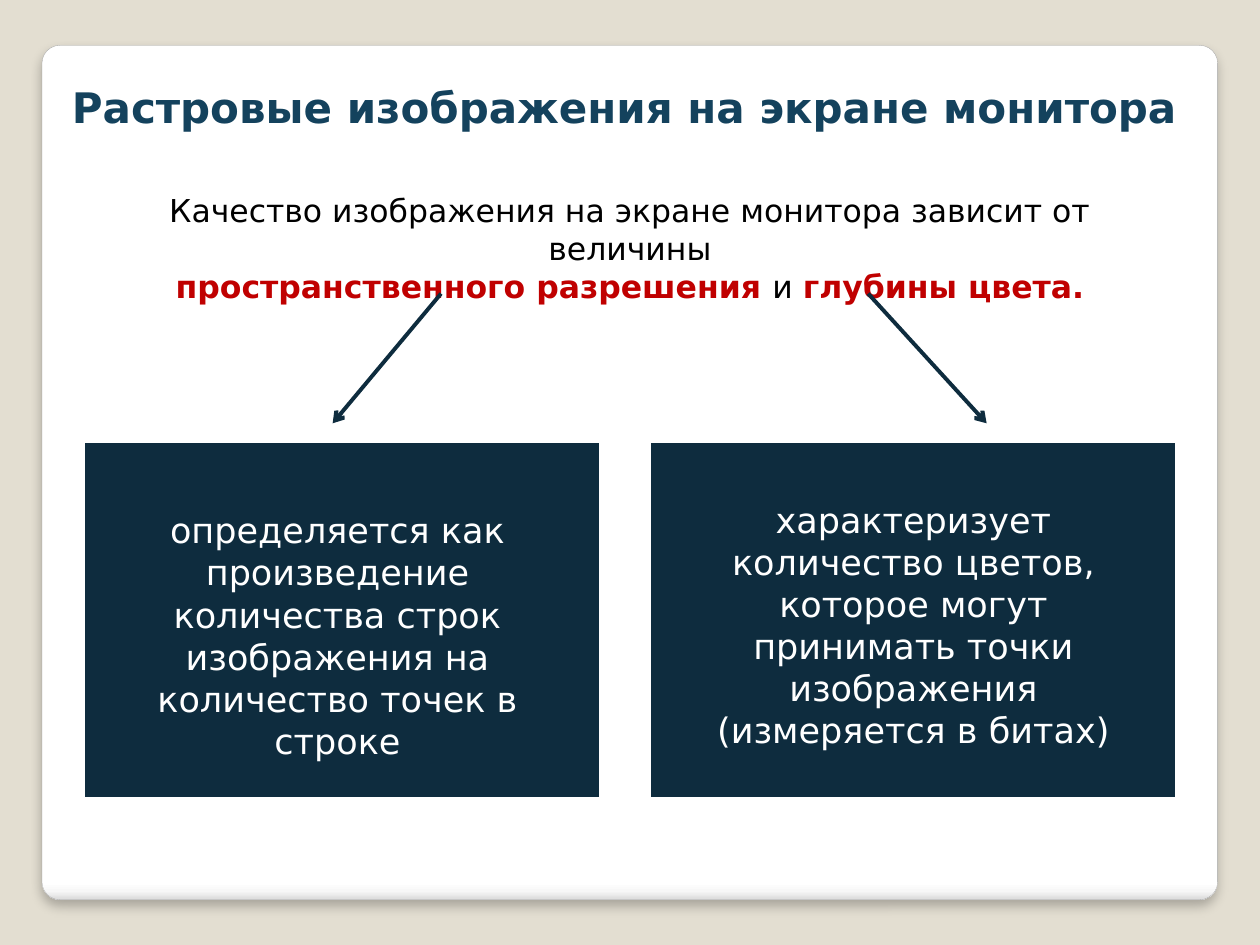
"""Build a slide on what determines the quality of raster images on a monitor."""
from lxml.etree import SubElement
from pptx import Presentation
from pptx.dml.color import RGBColor
from pptx.enum.shapes import MSO_CONNECTOR, MSO_SHAPE
from pptx.enum.text import MSO_AUTO_SIZE, PP_ALIGN
from pptx.oxml import parse_xml
from pptx.oxml.ns import nsdecls, qn
from pptx.util import Pt

BEIGE = RGBColor(0xE3, 0xDE, 0xD1)
GREY = RGBColor(0xA4, 0xA4, 0xA4)
WHITE = RGBColor(0xFF, 0xFF, 0xFF)
BLACK = RGBColor(0x00, 0x00, 0x00)
BLUE = RGBColor(0x14, 0x42, 0x5D)
NAVY = RGBColor(0x0E, 0x2C, 0x3E)
RED = RGBColor(0xC0, 0x00, 0x00)
CARD_STOPS = [(0, WHITE), (98, WHITE), (99, RGBColor(0xF7, 0xF7, 0xF7)),
              (100, RGBColor(0xDA, 0xDA, 0xDA))]
BORDERS = {"a:lnL": 1, "a:lnR": 1, "a:lnT": 1, "a:lnB": 3}
PANEL_TOP, PANEL_HEIGHT = 252.7, 203.8
ARROW_TOP, ARROW_BOTTOM = 167.8, 241.9


def add_text(place, size, lines):
    box = slide.shapes.add_textbox(*map(Pt, place))
    frame = box.text_frame
    frame.word_wrap = True
    frame.auto_size = MSO_AUTO_SIZE.SHAPE_TO_FIT_TEXT
    for index, pieces in enumerate(lines):
        line = frame.add_paragraph() if index else frame.paragraphs[0]
        line.alignment = PP_ALIGN.CENTER
        for wording, color, bold in pieces:
            run = line.add_run()
            run.text = wording
            run.font.color.rgb = color
            font_values = {"name": "DejaVu Sans", "size": Pt(size), "bold": bold}
            for key, value in font_values.items():
                setattr(run.font, key, value)


presentation = Presentation()
presentation.slide_width, presentation.slide_height = Pt(720), Pt(540)
slide = presentation.slides.add_slide(presentation.slide_layouts[6])
slide.background.fill.solid()
slide.background.fill.fore_color.rgb = BEIGE

card = slide.shapes.add_shape(
    MSO_SHAPE.ROUNDED_RECTANGLE, Pt(24), Pt(25.9), Pt(671.8), Pt(488.2))
card.adjustments[0] = 0.021
card.line.color.rgb = GREY
card.line.width = Pt(0.16)
card.shadow.inherit = False
stops = "".join(
    f'<a:gs pos="{position * 1000}"><a:srgbClr val="{color}"/></a:gs>'
    for position, color in CARD_STOPS)
card_format = card.element.spPr
card_format.find(qn("a:prstGeom")).addnext(parse_xml(
    f'<a:gradFill {nsdecls("a")} rotWithShape="1"><a:gsLst>{stops}</a:gsLst>'
    '<a:lin ang="5400000" scaled="0"/></a:gradFill>'))
card_format.find(qn("a:effectLst")).append(parse_xml(
    f'<a:outerShdw {nsdecls("a")} blurRad="{Pt(6)}" dist="{Pt(4)}" dir="5400000"'
    ' algn="t" rotWithShape="0"><a:srgbClr val="000000"><a:alpha val="25000"/>'
    '</a:srgbClr></a:outerShdw>'))

add_text((25.2, 43.2, 663.1, 36), 24,
         [[("Растровые изображения на экране монитора", BLUE, True)]])
add_text((42.5, 105.8, 635, 72.7), 18, [
    [("Качество изображения на экране монитора зависит от величины", BLACK, False)],
    [("пространственного разрешения ", RED, True), ("и ", BLACK, False),
     ("глубины цвета.", RED, True)],
])

factors = [
    (48.2, 294.5, (48.2, 287.3, 289.4, 128.2), (252, 190.1),
     ["определяется как произведение количества строк изображения на "
      "количество точек в строке"]),
    (371.5, 300.2, (377.3, 281.5, 289.4, 128.2), (496.1, 563.8),
     ["характеризует количество цветов, которое могут принимать точки изображения",
      "(измеряется в битах)"]),
]
for left, width, text_place, (arrow_start, arrow_end), definition in factors:
    panel = slide.shapes.add_table(
        1, 1, Pt(left), Pt(PANEL_TOP), Pt(width), Pt(PANEL_HEIGHT)).table
    panel.first_row = panel.horz_banding = False
    cell = panel.cell(0, 0)
    cell_format = cell._tc.get_or_add_tcPr()
    for side, weight in BORDERS.items():
        border = SubElement(cell_format, qn(side), w=str(Pt(weight)))
        SubElement(SubElement(border, qn("a:solidFill")), qn("a:srgbClr"), val=str(WHITE))
    cell.fill.solid()
    cell.fill.fore_color.rgb = NAVY

    add_text(text_place, 20, [[(wording, WHITE, False)] for wording in definition])

    arrow = slide.shapes.add_connector(
        MSO_CONNECTOR.STRAIGHT, Pt(arrow_start), Pt(ARROW_TOP),
        Pt(arrow_end), Pt(ARROW_BOTTOM))
    arrow.line.color.rgb = NAVY
    arrow.line.width = Pt(2.25)
    SubElement(arrow.line._get_or_add_ln(), qn("a:tailEnd"), type="arrow")
    SubElement(arrow._element.spPr, qn("a:effectLst"))

presentation.save("out.pptx")
